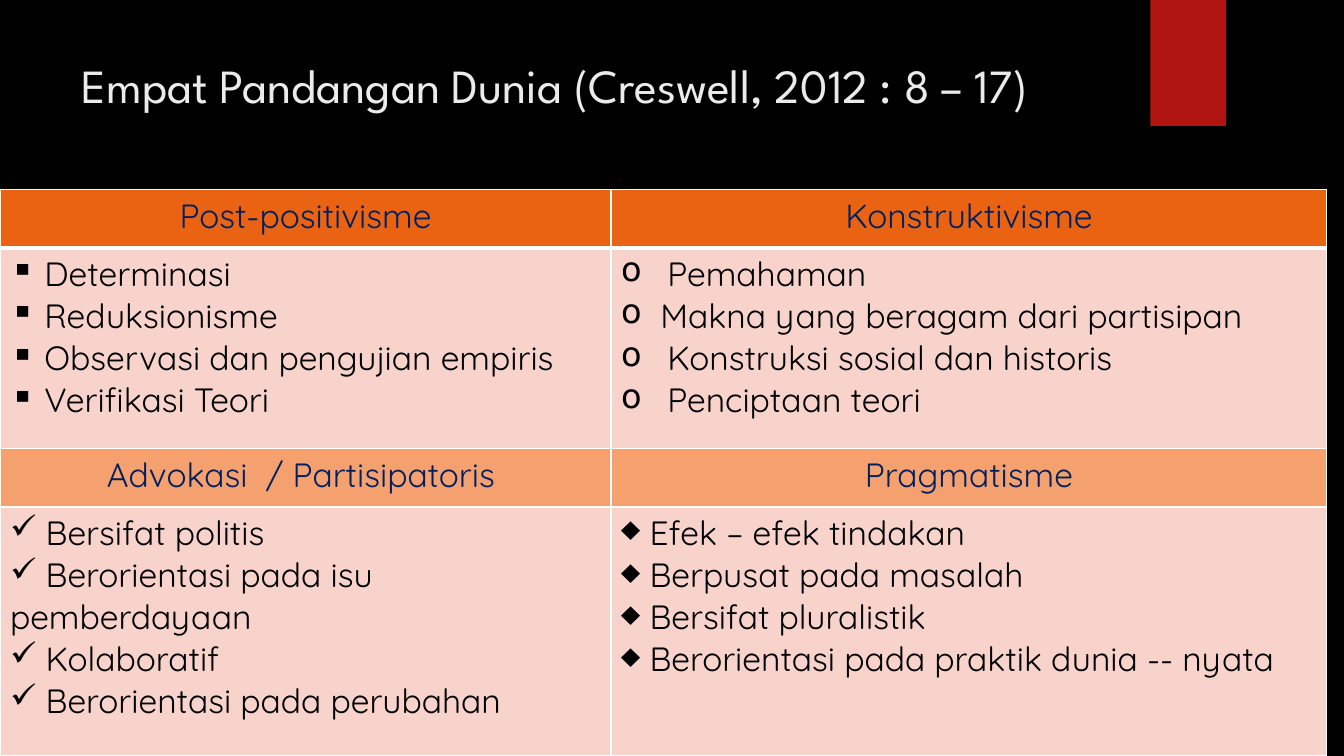
"""Build the slide on the four worldviews with a two-column table."""
import pptx
import pptx.dml.color
import pptx.enum.shapes
import pptx.enum.text
import pptx.oxml
import pptx.oxml.ns
import pptx.util
from pptx.util import Inches

NAMESPACE = pptx.oxml.ns.nsdecls("a")


def paint(fill, color):
    fill.solid()
    fill.fore_color.rgb = pptx.dml.color.RGBColor.from_string(color)


def add_text(paragraph, text, font_name, size, color):
    run = paragraph.add_run()
    run.text = text
    run.font.name = font_name
    run.font.size = pptx.util.Pt(size)
    paint(run.font.fill, color)


presentation = pptx.Presentation()
presentation.slide_width = Inches(13.33)
presentation.slide_height = Inches(7.5)
slide = presentation.slides.add_slide(presentation.slide_layouts[5])
paint(slide.background.fill, "000000")

ribbon = slide.shapes.add_shape(
    pptx.enum.shapes.MSO_SHAPE.RECTANGLE,
    Inches(11.41), Inches(0), Inches(0.75), Inches(1.25))
ribbon.shadow.inherit = False
paint(ribbon.fill, "B01513")
ribbon.line.fill.background()

title = slide.shapes.title
title.left, title.top = Inches(0.71), Inches(0.5)
title.width, title.height = Inches(10.29), Inches(1.53)
title.text_frame.word_wrap = True
title.text_frame.vertical_anchor = pptx.enum.text.MSO_ANCHOR.TOP
title_paragraph = title.text_frame.paragraphs[0]
title_paragraph.alignment = pptx.enum.text.PP_ALIGN.LEFT
add_text(title_paragraph, "Empat Pandangan Dunia (Creswell, 2012 : 8 – 17)",
         "League Spartan", 34, "EBEBEB")

worldviews = [
    ("Post-positivisme", "▪", [0, 0, 0, 0],
     ["Determinasi", "Reduksionisme", "Observasi dan pengujian empiris",
      "Verifikasi Teori"]),
    ("Konstruktivisme", "o", [0.46, 0.39, 0.46, 0.46],
     ["Pemahaman", "Makna yang beragam dari partisipan",
      "Konstruksi sosial dan historis", "Penciptaan teori"]),
    ("Advokasi  / Partisipatoris ", "✓", [0, 0, 0, 0],
     ["Bersifat politis", "Berorientasi pada isu pemberdayaan",
      "Kolaboratif", "Berorientasi pada perubahan"]),
    ("Pragmatisme", "♦", [0, 0, 0, 0],
     ["Efek – efek tindakan", "Berpusat pada masalah",
      "Bersifat pluralistik", "Berorientasi pada praktik dunia -- nyata"]),
]
column_widths = [6.06, 7.1]
row_heights = [0.58, 1.99, 0.58, 2.47]
row_fills = ["EA6312", "F7D3CC", "F4A16F", "F7D3CC"]

table = slide.shapes.add_table(
    4, 2, Inches(0), Inches(1.88),
    Inches(sum(column_widths)), Inches(sum(row_heights))).table
table.first_row = False
table.horz_banding = False
for column, width in zip(table.columns, column_widths):
    column.width = Inches(width)

for row_index, row in enumerate(table.rows):
    row.height = Inches(row_heights[row_index])
    for cell in row.cells:
        properties = cell._tc.get_or_add_tcPr()
        for side in "LRTB":
            thick = (row_index, side) in [(0, "B"), (1, "T")]
            line_width = pptx.util.Pt(3 if thick else 1)
            properties.append(pptx.oxml.parse_xml(
                f'<a:ln{side} {NAMESPACE} w="{line_width}"><a:solidFill>'
                f'<a:srgbClr val="FFFFFF"/></a:solidFill></a:ln{side}>'))
        paint(cell.fill, row_fills[row_index])

for index, (heading, bullet, indents, points) in enumerate(worldviews):
    block, column_index = divmod(index, 2)
    heading_cell = table.cell(2 * block, column_index)
    heading_paragraph = heading_cell.text_frame.paragraphs[0]
    heading_paragraph.alignment = pptx.enum.text.PP_ALIGN.CENTER
    add_text(heading_paragraph, heading, "Quicksand", 24, "002060")

    text_frame = table.cell(2 * block + 1, column_index).text_frame
    for number, (point, indent) in enumerate(zip(points, indents)):
        paragraph = text_frame.add_paragraph() if number else text_frame.paragraphs[0]
        properties = paragraph._p.get_or_add_pPr()
        properties.set("marL", str(Inches(indent)))
        properties.set("indent", str(-Inches(indent)))
        properties.append(pptx.oxml.parse_xml(
            f'<a:buChar {NAMESPACE} char="{bullet}"/>'))
        add_text(paragraph, point if indent else " " + point,
                 "Quicksand", 24, "000000")

presentation.save("out.pptx")
